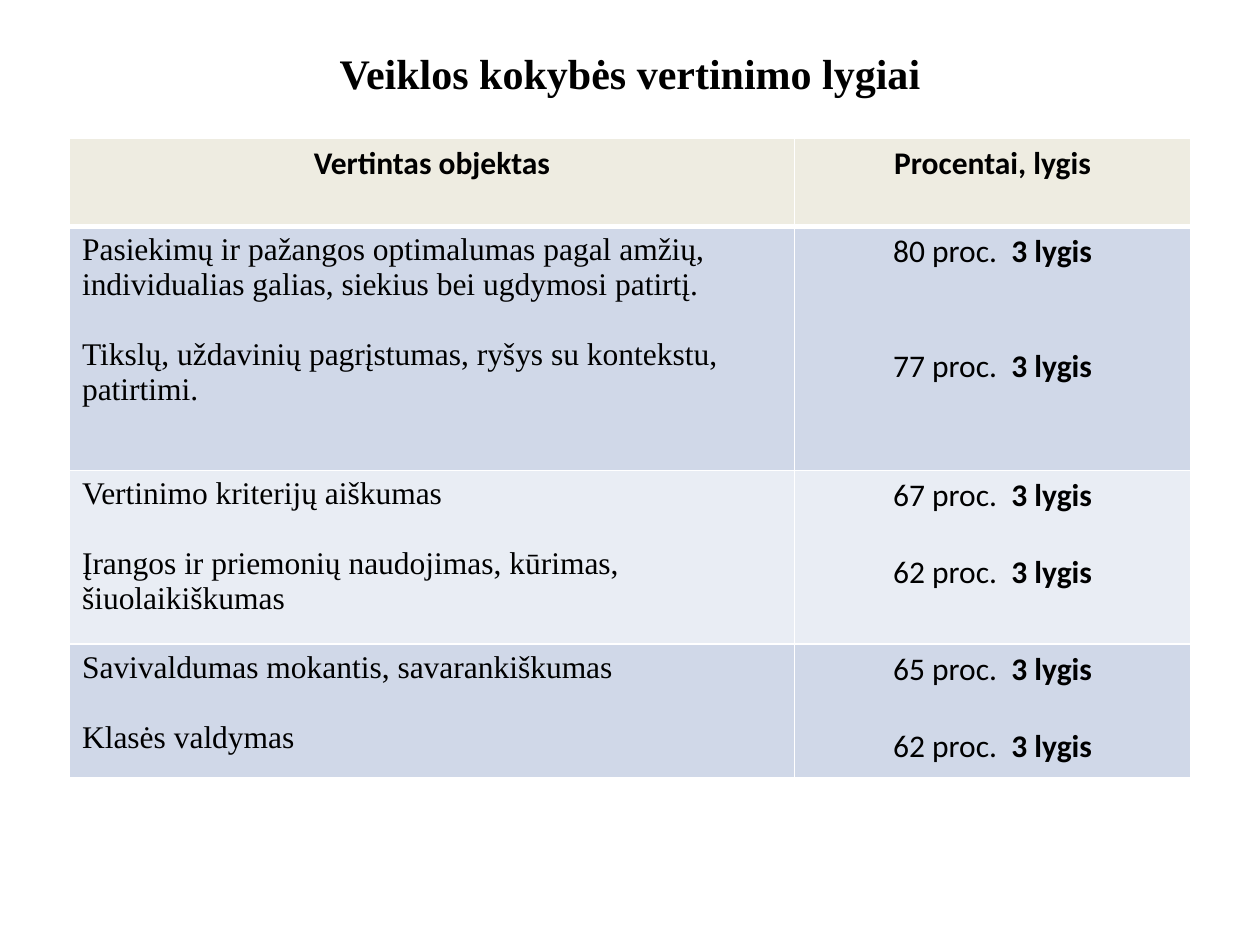
from pptx import Presentation
from pptx.dml.color import RGBColor as RGB
from pptx.enum.text import MSO_ANCHOR as Anchor, PP_ALIGN as Align
from pptx.oxml.ns import qn
from pptx.util import Cm, Pt
from lxml.etree import SubElement as Sub

BLACK = RGB(0x00, 0x00, 0x00)
WHITE = RGB(0xFF, 0xFF, 0xFF)
CREAM = RGB(0xEE, 0xEC, 0xE1)
BLUE = RGB(0xD0, 0xD8, 0xE8)
PALE = RGB(0xE9, 0xED, 0xF4)
SERIF, SANS = "Times New Roman", "Calibri"
COLS = (14.62, 7.98)
ROWS = (1.78, 4.92, 3.5, 2.7)
HEADS = ("Vertintas objektas", "Procentai, lygis")
LEVEL = "3 lygis"
GOALS = (
    (("Pasiekimų ir pažangos optimalumas pagal amžių, individualias galias, "
      "siekius bei ugdymosi patirtį.", 80),
     ("Tikslų, uždavinių pagrįstumas, ryšys su kontekstu, patirtimi.", 77)),
    (("Vertinimo kriterijų aiškumas", 67),
     ("Įrangos ir priemonių naudojimas, kūrimas, šiuolaikiškumas", 62)),
    (("Savivaldumas mokantis, savarankiškumas", 65),
     ("Klasės valdymas", 62)),
)


def style(run, face, size=18, bold=False):
    """Set the font of one run."""
    font = run.font
    font.name, font.size, font.bold = face, Pt(size), bold
    font.color.rgb = BLACK


def border(cell, low=1, top=1):
    """Draw white lines round a cell."""
    props = cell._tc.get_or_add_tcPr()
    for spot, (side, width) in enumerate(
            (("lnL", 1), ("lnR", 1), ("lnT", top), ("lnB", low))):
        line = Sub(props, qn("a:" + side), w=str(Pt(width)))
        fill = Sub(line, qn("a:solidFill"))
        Sub(fill, qn("a:srgbClr"), val=str(WHITE))
        props.insert(spot, line)


def paint(cell, color):
    """Fill a cell with one colour."""
    cell.fill.solid()
    cell.fill.fore_color.rgb = color


def write(cell, lines, face, align, gap):
    """Write one paragraph per line, each a list of text and bold pairs."""
    frame = cell.text_frame
    for num, parts in enumerate(lines):
        para = frame.add_paragraph() if num else frame.paragraphs[0]
        para.alignment = align
        if num:
            para.space_before = Pt(gap)
        for text, bold in parts:
            run = para.add_run()
            run.text = text
            style(run, face, bold=bold)


def add_title(slide, left, top, width, height):
    """Place and format the title."""
    title = slide.shapes.title
    title.left, title.top, title.width, title.height = left, top, width, height
    frame = title.text_frame
    frame.text = "Veiklos kokybės vertinimo lygiai"
    frame.vertical_anchor = Anchor.MIDDLE
    para = frame.paragraphs[0]
    para.alignment = Align.CENTER
    style(para.runs[0], SERIF, 24, True)


def add_grid(slide, left, top):
    """Place the table of goals and levels."""
    table = slide.shapes.add_table(
        len(ROWS), len(COLS), left, top, Cm(sum(COLS)), Cm(sum(ROWS))).table
    for col, width in zip(table.columns, COLS):
        col.width = Cm(width)
    for row, height in zip(table.rows, ROWS):
        row.height = Cm(height)
    for col, head in enumerate(HEADS):
        cell = table.cell(0, col)
        write(cell, [[(head, True)]], SANS, Align.CENTER, 0)
        paint(cell, CREAM)
        border(cell, low=3)
    for row, goals in enumerate(GOALS, 1):
        names = [[(name, False)] for name, _ in goals]
        marks = [[(f"{rate} proc.  ", False), (LEVEL, True)]
                 for _, rate in goals]
        write(table.cell(row, 0), names, SERIF, Align.LEFT, 20)
        write(table.cell(row, 1), marks, SANS, Align.CENTER,
              44 if row == 1 else 22)
        for cell in table.rows[row].cells:
            paint(cell, BLUE if row % 2 else PALE)
            border(cell, top=3 if row == 1 else 1)


def main():
    """Build the slide and save it."""
    deck = Presentation()
    deck.slide_width, deck.slide_height = Cm(25.4), Cm(19.05)
    slide = deck.slides.add_slide(deck.slide_layouts[5])
    add_title(slide, Cm(1.27), Cm(0.76), Cm(22.86), Cm(1.42))
    add_grid(slide, Cm(1.4), Cm(2.78))
    deck.save("out.pptx")


if __name__ == "__main__":
    main()
